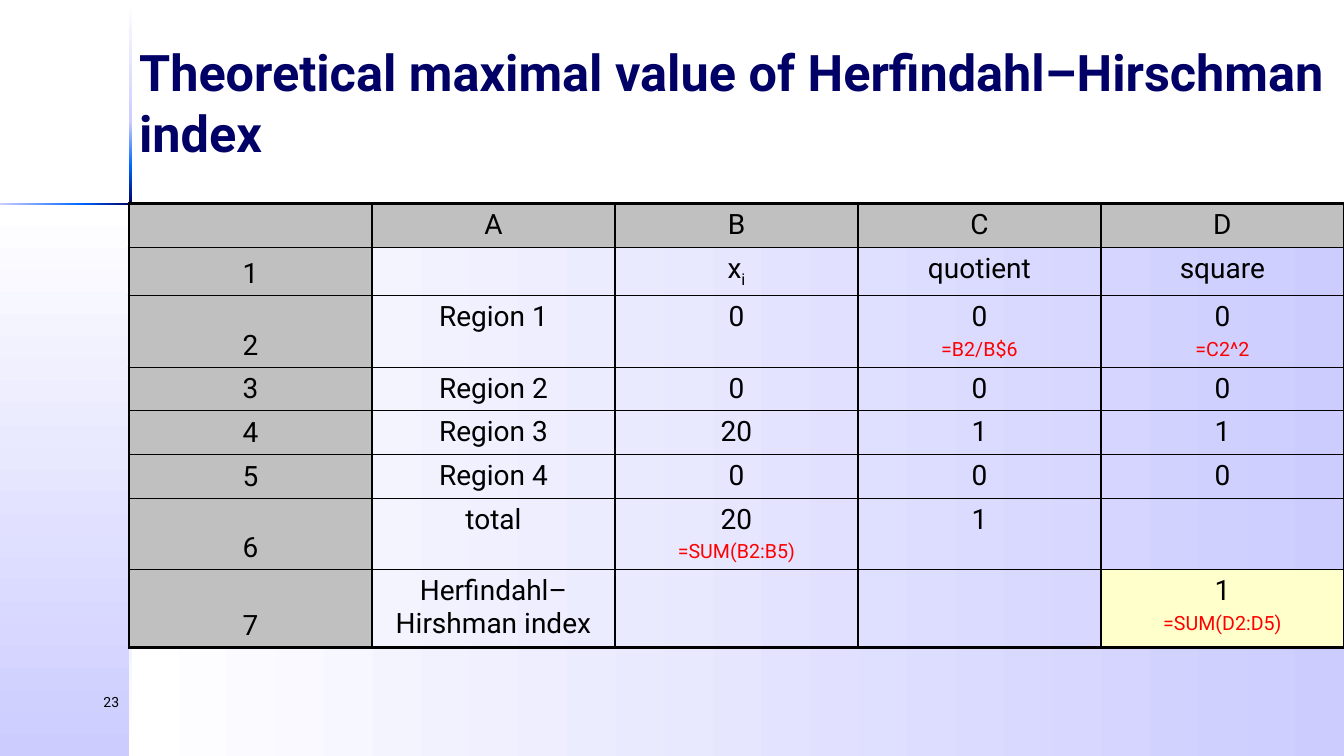
from copy import deepcopy
from typing import NamedTuple

from lxml.etree import SubElement
from pptx import Presentation
from pptx.dml.color import RGBColor
from pptx.enum.shapes import MSO_SHAPE
from pptx.enum.text import MSO_ANCHOR, MSO_AUTO_SIZE, PP_ALIGN
from pptx.oxml.ns import qn
from pptx.util import Emu, Pt

PX = 9144  # 100 px to the inch
FONT = "Roboto"
COLORS = {
    "white": "FFFFFF", "lavender": "CCCCFF", "blue": "0066FF", "navy": "000066",
    "black": "000000", "red": "FF0000", "gray": "C0C0C0", "cream": "FFFFCC",
}


class Band(NamedTuple):
    left: int
    top: int
    width: int
    height: int
    colors: tuple[str, ...]
    vertical: bool


class Entry(NamedTuple):
    text: str = ""
    formula: str = ""
    sub: str = ""


BANDS = [
    Band(129, 202, 1204, 548, ("white", "lavender"), False),
    Band(0, 202, 129, 548, ("white", "lavender"), True),
    Band(128, 165, 3, 73, ("blue", "navy", "blue"), True),
    Band(178, 201, 58, 2, ("blue", "lavender"), False),
    Band(0, 201, 81, 2, ("lavender", "blue"), False),
    Band(128, 1, 3, 120, ("white", "lavender"), True),
    Band(128, 282, 3, 468, ("lavender", "white"), True),
    Band(236, 201, 1097, 2, ("lavender", "white"), False),
    Band(128, 238, 3, 44, ("blue", "lavender"), True),
    Band(128, 121, 3, 44, ("lavender", "blue"), True),
    Band(81, 201, 97, 2, ("blue", "navy", "blue"), False),
]

ROW_HEIGHTS = [43, 47, 70, 43, 43, 43, 70, 77]
COLUMN_WIDTH = 241
ENTRIES = [
    [Entry(), Entry("A"), Entry("B"), Entry("C"), Entry("D")],
    [Entry("1"), Entry(), Entry("x", sub="i"), Entry("quotient"), Entry("square")],
    [Entry("2"), Entry("Region 1"), Entry("0"), Entry("0", "=B2/B$6"), Entry("0", "=C2^2")],
    [Entry("3"), Entry("Region 2"), Entry("0"), Entry("0"), Entry("0")],
    [Entry("4"), Entry("Region 3"), Entry("20"), Entry("1"), Entry("1")],
    [Entry("5"), Entry("Region 4"), Entry("0"), Entry("0"), Entry("0")],
    [Entry("6"), Entry("total"), Entry("20", "=SUM(B2:B5)"), Entry("1"), Entry()],
    [Entry("7"), Entry("Herfindahl–Hirshman index"), Entry(), Entry(), Entry("1", "=SUM(D2:D5)")],
]


def px(*lengths: int) -> list[Emu]:
    return [Emu(n * PX) for n in lengths]


def rgb(name: str) -> RGBColor:
    return RGBColor.from_string(COLORS[name])


def write(p, text: str, *, size=20, color="black", bold=False,
          align=PP_ALIGN.CENTER, before=0, baseline=0) -> None:
    p.alignment = align
    p.space_before = Pt(before)
    r = p.add_run()
    r.text = text
    r.font.name = FONT
    r.font.size = Pt(size)
    r.font.bold = bold
    r.font.color.rgb = rgb(color)
    if baseline:
        r.font._element.set("baseline", str(baseline * 1000))


def add_band(slide, band: Band) -> None:
    sp = slide.shapes.add_shape(
        MSO_SHAPE.RECTANGLE, *px(band.left, band.top, band.width, band.height))
    sp.shadow.inherit = False
    sp.line.fill.background()
    sp.fill.gradient()
    # python-pptx counts angles counter-clockwise: 270 runs downwards
    sp.fill.gradient_angle = 270 if band.vertical else 0
    stop_list = sp._element.spPr.find(".//" + qn("a:gsLst"))
    for _ in band.colors[2:]:
        stop_list.append(deepcopy(stop_list[-1]))
    for i, (stop, color) in enumerate(zip(sp.fill.gradient_stops, band.colors)):
        stop.color.rgb = rgb(color)
        stop.position = i / (len(band.colors) - 1)


def add_borders(cell, row: int, col: int) -> None:
    """Heavy lines on the table's outline, thin ones inside."""
    tc_pr = cell._tc.get_or_add_tcPr()
    outer = {"L": col == 0, "R": col == len(ENTRIES[0]) - 1,
             "T": row == 0, "B": row == len(ENTRIES) - 1}
    for side, heavy in outer.items():
        ln = SubElement(tc_pr, qn(f"a:ln{side}"), w=str(Pt(2.25 if heavy else 1)))
        fill = SubElement(ln, qn("a:solidFill"))
        SubElement(fill, qn("a:srgbClr"), val=COLORS["black"])


def fill_cell(cell, entry: Entry, row: int, col: int) -> None:
    add_borders(cell, row, col)
    is_result = (row, col) == (len(ENTRIES) - 1, len(ENTRIES[0]) - 1)
    if row == 0 or col == 0 or is_result:
        cell.fill.solid()
        cell.fill.fore_color.rgb = rgb("cream" if is_result else "gray")
    else:
        cell.fill.background()
    cell.vertical_anchor = MSO_ANCHOR.BOTTOM if col == 0 and row else MSO_ANCHOR.TOP
    tf = cell.text_frame
    write(tf.paragraphs[0], entry.text)
    if entry.sub:
        write(tf.paragraphs[0], entry.sub, baseline=-25)
    if entry.formula:
        write(tf.add_paragraph(), entry.formula, size=14, color="red", before=3)


def add_index_table(slide) -> None:
    rows, cols = len(ENTRIES), len(ENTRIES[0])
    table = slide.shapes.add_table(
        rows, cols, *px(128, 202, COLUMN_WIDTH * cols, sum(ROW_HEIGHTS))).table
    table.first_row = table.horz_banding = False
    for column in table.columns:
        column.width = Emu(COLUMN_WIDTH * PX)
    for row, height in enumerate(ROW_HEIGHTS):
        table.rows[row].height = Emu(height * PX)
        for col, entry in enumerate(ENTRIES[row]):
            fill_cell(table.cell(row, col), entry, row, col)


def main() -> None:
    prs = Presentation()
    prs.slide_width, prs.slide_height = px(1333, 750)
    slide = prs.slides.add_slide(prs.slide_layouts[5])
    for band in BANDS:
        add_band(slide, band)

    title = slide.shapes.title
    title.left, title.top, title.width, title.height = px(128, 0, 1205, 202)
    tf = title.text_frame
    tf.auto_size = MSO_AUTO_SIZE.NONE
    tf.vertical_anchor = MSO_ANCHOR.MIDDLE
    write(tf.paragraphs[0], "Theoretical maximal value of Herfindahl–Hirschman index",
          size=36, color="navy", bold=True, align=PP_ALIGN.LEFT)

    number = slide.shapes.add_textbox(*px(0, 683, 128, 50)).text_frame
    number.word_wrap = True
    write(number.paragraphs[0], "23", size=10, align=PP_ALIGN.RIGHT)

    add_index_table(slide)
    prs.save("out.pptx")


if __name__ == "__main__":
    main()
